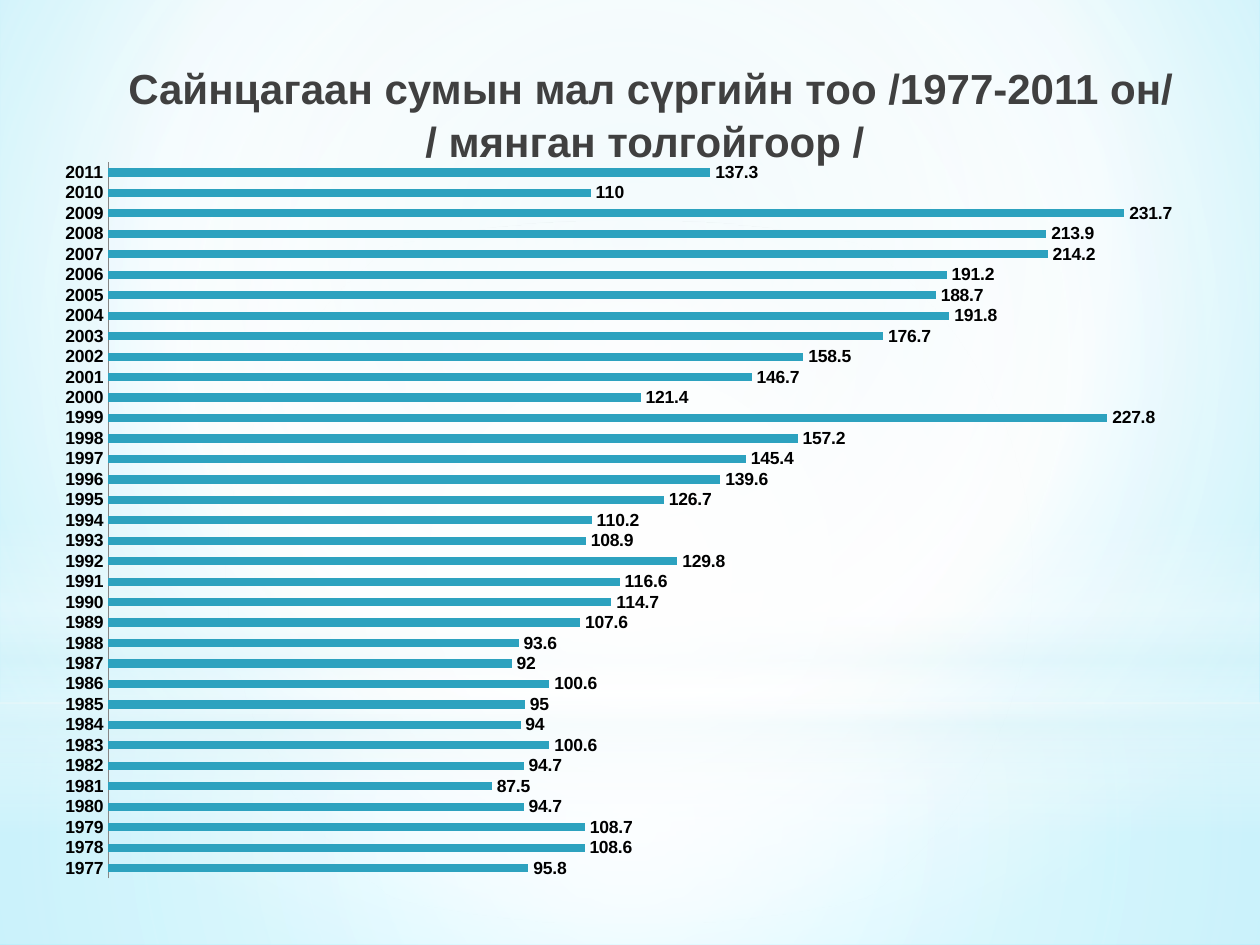
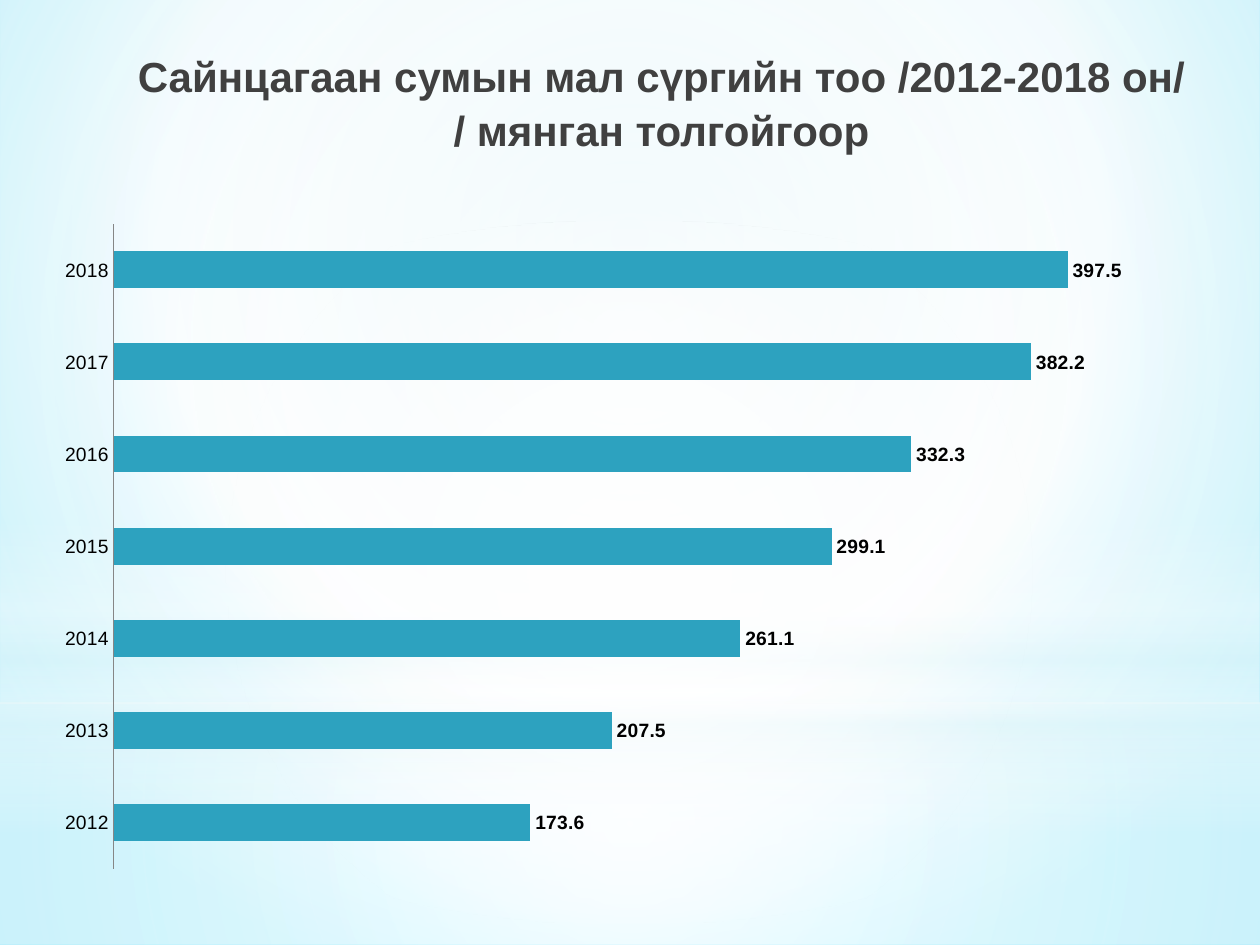
from lxml.etree import SubElement
from pptx import Presentation
from pptx.chart.data import CategoryChartData as ChartData
from pptx.dml.color import RGBColor as RGB
from pptx.enum.chart import XL_CHART_TYPE as CT, XL_LABEL_POSITION as LP, XL_TICK_MARK as TM
from pptx.enum.shapes import MSO_SHAPE as SH
from pptx.enum.text import MSO_ANCHOR, MSO_AUTO_SIZE, PP_ALIGN
from pptx.oxml.ns import qn
from pptx.util import Inches, Pt

COLORS = {"title": "404040", "text": "000000", "axis": "868686", "bar": "2DA2BF",
          "white": "FFFFFF", "pale": "DEF5FA", "sky": "CDEFF7", "cyan": "7CE7FF"}
FONT, CHART_FONT = "Arial", "Lato"
CENTER = (50, 50, 50, 50)

BANDS = [
    (SH.RECTANGLE, (0, 5.58, 10, 1.92),
     [(0, "white", 91), (37, "white", 76), (100, "pale", 79)], CENTER),
    (SH.RECTANGLE, (0, 0, 10, 5.58),
     [(0, "white", 89), (48, "white", 62), (100, "pale", 79)], CENTER),
    (SH.RECTANGLE, (0, 4.12, 10, 2.5),
     [(0, "white", 0), (29, "white", 30), (45, "pale", 40),
      (55, "white", 26), (65, "pale", 60), (100, "white", 0)], None),
    (SH.OVAL, (0, 1.75, 10, 5.58), [(0, "white", 100), (56, "white", 0)], CENTER),
]

HERD_1977 = [95.8, 108.6, 108.7, 94.7, 87.5, 94.7, 100.6, 94, 95, 100.6, 92, 93.6,
             107.6, 114.7, 116.6, 129.8, 108.9, 110.2, 126.7, 139.6, 145.4, 157.2,
             227.8, 121.4, 146.7, 158.5, 176.7, 191.8, 188.7, 191.2, 214.2, 213.9,
             231.7, 110, 137.3]
HERD_2012 = [173.6, 207.5, 261.1, 299.1, 332.3, 382.2, 397.5]


def color(name):
    """Return the named colour."""
    return RGB.from_string(COLORS[name])


def set_gradient(fill, root, stops, focus=None):
    """Give a fill its stops, radial around focus or else running downwards."""
    fill.gradient()
    grad = next(root.iter(qn("a:gradFill")))
    for child in list(grad):
        grad.remove(child)
    gs_list = SubElement(grad, qn("a:gsLst"))
    for pos, name, alpha in stops:
        gs = SubElement(gs_list, qn("a:gs"), pos=str(pos * 1000))
        clr = SubElement(gs, qn("a:srgbClr"), val=COLORS[name])
        if alpha < 100:
            SubElement(clr, qn("a:alpha"), val=str(alpha * 1000))
    if focus:
        way = SubElement(grad, qn("a:path"), path="circle")
        SubElement(way, qn("a:fillToRect"),
                   {side: str(v * 1000) for side, v in zip("ltrb", focus)})
    else:
        SubElement(grad, qn("a:lin"), ang="5400000", scaled="0")


def add_backdrop(layout, s):
    """Draw the glow bands and move them to the back of the shared layout."""
    set_gradient(layout.background.fill, layout.background._cSld,
                 [(0, "sky", 100), (60, "white", 100), (100, "cyan", 100)],
                 (20, 10, 20, 60))
    for i, (kind, box, stops, focus) in enumerate(BANDS):
        sp = s.shapes.add_shape(kind, *map(Inches, box))
        sp.shadow.inherit = False
        sp.line.fill.background()
        set_gradient(sp.fill, sp._element.spPr, stops, focus)
        layout.shapes._spTree.insert(2 + i, sp._element)


def style_font(font, size, bold=False, name=FONT, fill="text"):
    """Set the face, size, weight and colour of a font."""
    font.name, font.size, font.bold = name, Pt(size), bold
    font.color.rgb = color(fill)


def set_text(tf, text, align=PP_ALIGN.CENTER, spacing=1.06, **fmt):
    """Write text into a frame with the given format."""
    tf.word_wrap, tf.auto_size = True, MSO_AUTO_SIZE.NONE
    tf.vertical_anchor = MSO_ANCHOR.TOP
    p = tf.paragraphs[0]
    p.text, p.alignment, p.line_spacing = text, align, spacing
    for r in p.runs:
        style_font(r.font, **fmt)


def add_title(s, text, box):
    """Place and fill the title placeholder."""
    sp = s.shapes.title
    sp.left, sp.top, sp.width, sp.height = map(Inches, box)
    set_text(sp.text_frame, text, size=24, bold=True, fill="title")


def add_herd_chart(s, box, first_year, vals, top, size, bold_years):
    """Add the bar chart of livestock by year."""
    data = ChartData()
    data.categories = [str(first_year + i) for i in range(len(vals))]
    data.add_series("Series 1", vals)
    chart = s.shapes.add_chart(CT.BAR_CLUSTERED, *map(Inches, box), data).chart
    chart.has_legend = chart.has_title = False
    style_font(chart.font, 18, name=CHART_FONT)

    years, scale = chart.category_axis, chart.value_axis
    years.major_tick_mark = years.minor_tick_mark = TM.NONE
    years.format.line.color.rgb = color("axis")
    style_font(years.tick_labels.font, size, bold_years)
    scale.visible = scale.has_major_gridlines = False
    scale.minimum_scale, scale.maximum_scale = 0, top

    plot = chart.plots[0]
    plot.gap_width, plot.overlap, plot.vary_by_categories = 150, -25, False
    bars = plot.series[0]
    bars.format.fill.solid()
    bars.format.fill.fore_color.rgb = color("bar")
    labels = bars.data_labels
    labels.show_value, labels.position = True, LP.OUTSIDE_END
    style_font(labels.font, size, True)


def main():
    """Build both slides and save them."""
    prs = Presentation()
    prs.slide_width, prs.slide_height = Inches(10), Inches(7.5)
    layout = prs.slide_layouts[5]

    s = prs.slides.add_slide(layout)
    add_backdrop(layout, s)
    add_title(s, "Сайнцагаан сумын мал сүргийн тоо /1977-2011 он/\n/ мянган толгойгоор / ",
              (0.58, 0.42, 9.17, 0.83))
    add_herd_chart(s, (0.33, 1.17, 9.42, 5.92), 1977, HERD_1977, 250, 10, True)

    s = prs.slides.add_slide(layout)
    add_title(s, "Сайнцагаан сумын мал сүргийн тоо /2012-2018 он/\n/ мянган толгойгоор",
              (0.75, 0.33, 9, 1.25))
    add_herd_chart(s, (0.33, 1.67, 9.33, 5.33), 2012, HERD_2012, 450, 11, False)

    prs.save("out.pptx")


if __name__ == "__main__":
    main()
